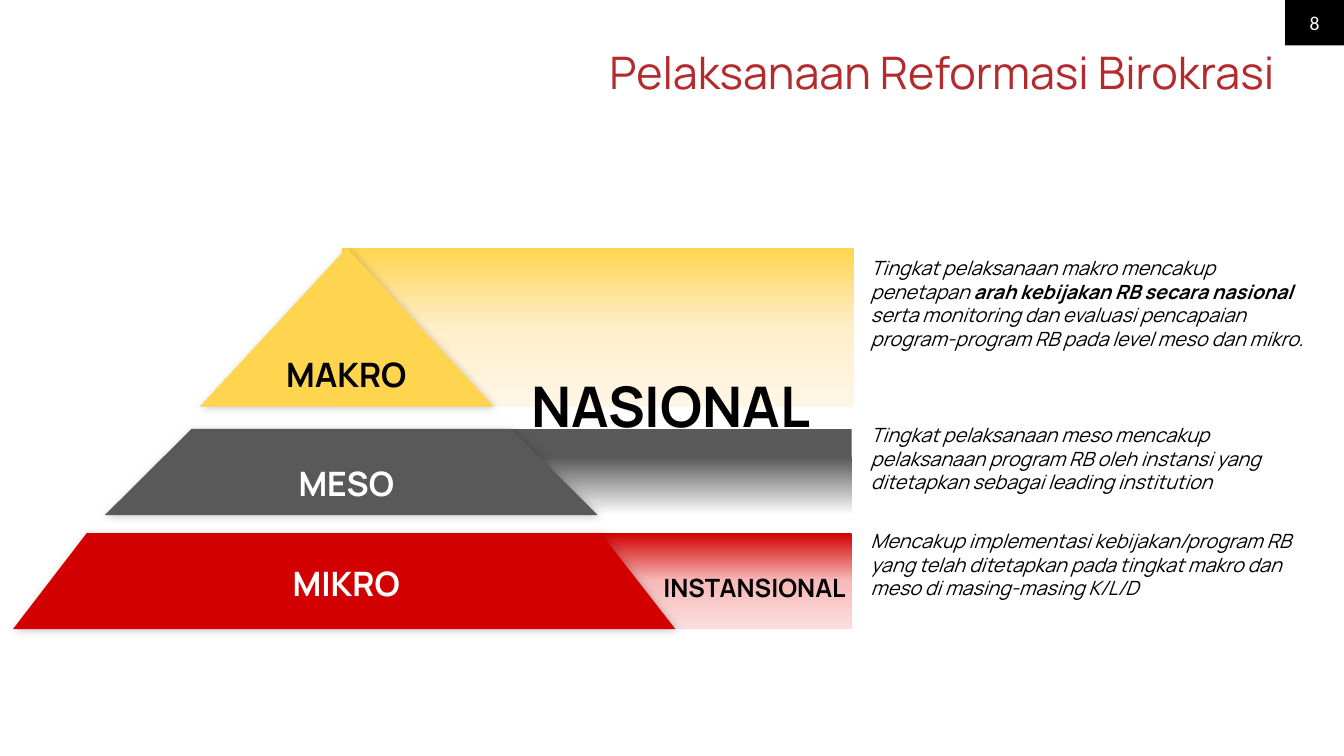
from dataclasses import dataclass

from lxml import etree
from pptx import Presentation
from pptx.dml.color import RGBColor
from pptx.enum.shapes import MSO_SHAPE
from pptx.enum.text import MSO_ANCHOR, PP_ALIGN
from pptx.oxml.ns import qn
from pptx.util import Inches, Pt

RECT = MSO_SHAPE.RECTANGLE
LEFT, CENTER, RIGHT = PP_ALIGN.LEFT, PP_ALIGN.CENTER, PP_ALIGN.RIGHT
TOP, MIDDLE = MSO_ANCHOR.TOP, MSO_ANCHOR.MIDDLE
FONT = "Manrope"
CELL = Inches(0.1)  # grid cell: the slide has 133.3 columns and 75 rows
COLORS = {"title": "B42B2D", "black": "000000", "white": "FFFFFF",
          "yellow": "FFD54F", "grey": "595959", "red": "D20000"}


@dataclass
class Tier:
    """A pyramid level; x values are columns and y values rows from the pyramid's corner."""
    label: str
    fill: str
    text_color: str
    top: float
    height: float
    top_edge: tuple
    bottom_edge: tuple
    label_top: float
    band: tuple
    stops: tuple
    note_top: float
    note: tuple


TIERS = [
    Tier("MAKRO", "yellow", "black", 0, 15.75, (33.1, 33.1), (18.5, 47.7), 10,
         (32.6, 50.8), ((0, "FFD54F"), (50, "FFEECA"), (100, "FFF6E5")), 0.3,
         (("Tingkat pelaksanaan makro mencakup penetapan ", False),
          ("arah kebijakan RB secara nasional ", True),
          ("serta monitoring dan evaluasi pencapaian program-program RB "
           "pada level meso dan mikro.", False))),
    Tier("MESO", "grey", "white", 17.95, 8.55, (17.7, 49.4), (9.1, 58), 2.85,
         (32.4, 50.8), ((0, "595959"), (33, "595959"), (100, "FFFFFF")), 16.9,
         (("Tingkat pelaksanaan meso mencakup pelaksanaan program RB oleh instansi "
           "yang ditetapkan sebagai leading institution", False),)),
    Tier("MIKRO", "red", "white", 28.3, 9.5, (7.3, 58.3), (0, 65.7), 2.5,
         (33, 50.2), ((0, "D20000"), (50, "F8BABA"), (100, "FBDDDD")), 27.4,
         (("Mencakup implementasi kebijakan/program RB yang telah ditetapkan pada "
           "tingkat makro dan meso di masing-masing K/L/D", False),)),
]


def rgb(name):
    return RGBColor.from_string(COLORS[name])


def cells(*values):
    return [round(v * CELL) for v in values]


def style(p, size, color, align=LEFT, bold=None, italic=None, font=FONT):
    p.alignment = align
    p.font.name, p.font.size = font, Pt(size)
    p.font.bold, p.font.italic = bold, italic
    p.font.color.rgb = rgb(color)


def plain(sp):
    sp.shadow.inherit = False
    sp.line.fill.background()


def add_text(slide, box):
    tf = slide.shapes.add_textbox(*cells(*box)).text_frame
    tf.word_wrap = True
    return tf.paragraphs[0]


def add_label(slide, box, text, size, color):
    p = add_text(slide, box)
    p.text = text
    style(p, size, color, CENTER, bold=True)


def add_band(slide, box, stops):
    """Add a rectangle that fades from top to bottom."""
    sp = slide.shapes.add_shape(RECT, *cells(*box))
    plain(sp)
    sp.fill.gradient()
    sp.fill.gradient_angle = 270
    stop_list = next(sp._element.spPr.iter(qn("a:gsLst")))
    for old in list(stop_list):
        stop_list.remove(old)
    for position, color in stops:
        gs = etree.SubElement(stop_list, qn("a:gs"), pos=str(position * 1000))
        etree.SubElement(gs, qn("a:srgbClr"), val=color)


def add_soft_shadow(sp):
    effects = sp._element.spPr.find(qn("a:effectLst"))
    shadow = etree.SubElement(effects, qn("a:outerShdw"), blurRad=str(Pt(6)),
                              dist=str(Pt(1)), dir=str(45 * 60000))
    color = etree.SubElement(shadow, qn("a:srgbClr"), val=COLORS["black"])
    etree.SubElement(color, qn("a:alpha"), val="20000")


def add_slab(slide, left, top, tier):
    (tl, tr), (bl, br) = tier.top_edge, tier.bottom_edge
    bottom = top + tier.height
    corners = [cells(left + x, y) for x, y in
               ((tl, top), (bl, bottom), (br, bottom), (tr, top))]
    builder = slide.shapes.build_freeform(*corners[0])
    builder.add_line_segments(corners[1:], close=True)
    sp = builder.convert_to_shape()
    plain(sp)
    sp.fill.solid()
    sp.fill.fore_color.rgb = rgb(tier.fill)
    add_soft_shadow(sp)


def add_header(slide, box):
    title = slide.shapes.title
    title.left, title.top, title.width, title.height = cells(*box)
    tf = title.text_frame
    tf.text = "Pelaksanaan Reformasi Birokrasi"
    tf.vertical_anchor = TOP
    tf.word_wrap = True
    p = tf.paragraphs[0]
    p.line_spacing = 0.9
    style(p, 32, "title", RIGHT)


def add_page_number(slide, box):
    sp = slide.shapes.add_shape(RECT, *cells(*box))
    plain(sp)
    sp.fill.solid()
    sp.fill.fore_color.rgb = rgb("black")
    sp.text_frame.text = "8"
    sp.text_frame.vertical_anchor = MIDDLE
    style(sp.text_frame.paragraphs[0], 14, "white", CENTER, font="Calibri")


def add_pyramid(slide, box):
    left, top, width, _ = box
    for tier in TIERS:
        y = top + tier.top
        band_x, band_width = tier.band
        add_band(slide, (left + band_x, y, band_width, tier.height), tier.stops)
        add_slab(slide, left, y, tier)
        add_label(slide, (left + 24.5, y + tier.label_top, 17.1, 5),
                  tier.label, 24, tier.text_color)
    add_label(slide, (left + 49.5, top + 11.8, 31.5, 7.7), "NASIONAL", 40, "black")
    add_label(slide, (left + width - 25.6, top + 31.7, 31.5, 4),
              "INSTANSIONAL", 18, "black")


def add_notes_column(slide, box):
    left, top, width, _ = box
    for tier in TIERS:
        p = add_text(slide, (left, top + tier.note_top, width, 8.1))
        for text, bold in tier.note:
            r = p.add_run()
            r.text = text
            r.font.bold = bold
        style(p, 14, "black", italic=True)


def main():
    prs = Presentation()
    prs.slide_width, prs.slide_height = cells(133.33, 75)
    slide = prs.slides.add_slide(prs.slide_layouts[5])
    add_header(slide, (33.4, 4.5, 94.1, 13.9))
    add_page_number(slide, (127.5, 0, 5.83, 4.5))
    add_notes_column(slide, (85.4, 24.6, 46.3, 37.8))
    add_pyramid(slide, (1.3, 24.6, 83.4, 37.8))
    prs.save("out.pptx")


if __name__ == "__main__":
    main()
